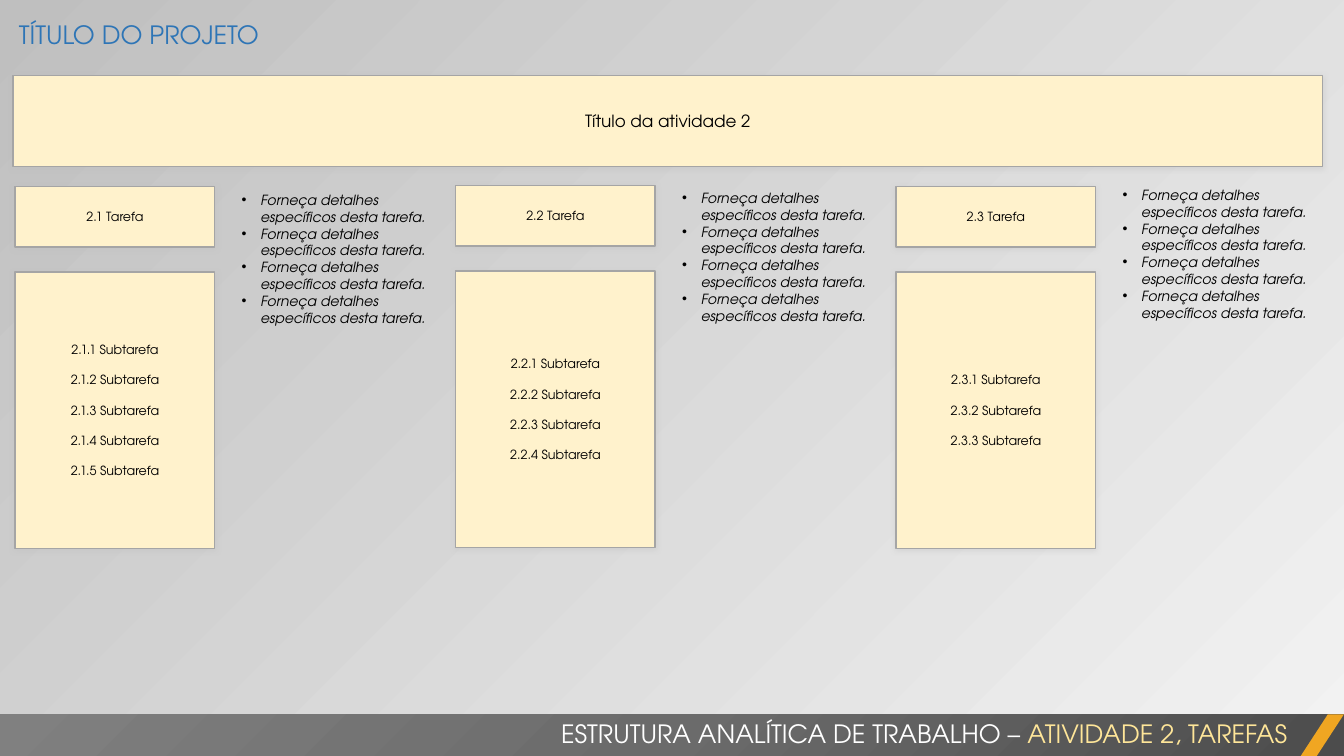
from lxml.etree import SubElement
from pptx import Presentation
from pptx.dml.color import RGBColor
from pptx.enum.shapes import MSO_SHAPE
from pptx.enum.text import MSO_ANCHOR, MSO_AUTO_SIZE, PP_ALIGN
from pptx.oxml import parse_xml
from pptx.oxml.ns import qn
from pptx.util import Pt

FONT = "TeX Gyre Adventor"
NAMESPACE = 'xmlns:a="http://schemas.openxmlformats.org/drawingml/2006/main"'
SHADOW = f"""<a:outerShdw {NAMESPACE} blurRad="50800" dist="12700" dir="5400000"
 algn="t" rotWithShape="0"><a:srgbClr val="BFBFBF"><a:alpha val="40000"/></a:srgbClr>
 </a:outerShdw>"""
FOOTER_GRADIENT = f"""<a:gradFill {NAMESPACE} rotWithShape="1"><a:gsLst>
 <a:gs pos="0"><a:srgbClr val="4C4C4C"/></a:gs>
 <a:gs pos="50000"><a:srgbClr val="6B6B6B"/></a:gs>
 <a:gs pos="100000"><a:srgbClr val="808080"/></a:gs></a:gsLst>
 <a:path path="circle"><a:fillToRect l="100000" t="100000"/></a:path></a:gradFill>"""


def write(paragraph, text, size, color="000000", italic=None):
    run = paragraph.add_run()
    run.text = text
    run.font.name = FONT
    run.font.size = Pt(size)
    run.font.italic = italic
    run.font.color.rgb = RGBColor.from_string(color)


def add_box(left, top, width, height, lines, size):
    """Add a cream box with a soft shadow and centred lines, one blank line apart."""
    box = slide.shapes.add_shape(
        MSO_SHAPE.RECTANGLE, Pt(left), Pt(top), Pt(width), Pt(height))
    box.fill.solid()
    box.fill.fore_color.rgb = RGBColor.from_string("FFF2CC")
    box.line.color.rgb = RGBColor.from_string("A5A5A5")
    box.line.width = Pt(1)
    box.shadow.inherit = False
    box._element.spPr.find(qn("a:effectLst")).append(parse_xml(SHADOW))
    frame = box.text_frame
    frame.word_wrap = True
    frame.vertical_anchor = MSO_ANCHOR.MIDDLE
    for index, line in enumerate(lines):
        paragraph = frame.add_paragraph() if index else frame.paragraphs[0]
        paragraph.alignment = PP_ALIGN.CENTER
        if index:
            paragraph.space_before = Pt(1.2 * size)
        write(paragraph, line, size)


presentation = Presentation()
presentation.slide_width = Pt(960)
presentation.slide_height = Pt(540)
slide = presentation.slides.add_slide(presentation.slide_layouts[6])

background = slide.background.fill
background.gradient()
background.gradient_angle = 135
for stop, color, position in zip(background.gradient_stops, ("F2F2F2", "BFBFBF"), (0, 1)):
    stop.color.rgb = RGBColor.from_string(color)
    stop.position = position

# Footer band with its accent
footer = slide.shapes.add_shape(MSO_SHAPE.RECTANGLE, 0, Pt(510.2), Pt(960), Pt(30))
footer.shadow.inherit = False
footer.line.fill.background()
footer._element.spPr.find(qn("a:prstGeom")).addnext(parse_xml(FOOTER_GRADIENT))

accent = slide.shapes.add_shape(
    MSO_SHAPE.PARALLELOGRAM, Pt(929), Pt(510.2), Pt(31), Pt(30))
accent.adjustments[0] = 0.652
accent.shadow.inherit = False
accent.fill.solid()
accent.fill.fore_color.rgb = RGBColor.from_string("F0A622")
accent.line.fill.background()

# Project title and footer title
titles = [
    (6.5, 10.1, 728, PP_ALIGN.LEFT, [("TÍTULO DO PROJETO", "2E75B6")]),
    (122.4, 509.8, 804.2, PP_ALIGN.RIGHT,
     [("ESTRUTURA ANALÍTICA DE TRABALHO – ", "FFFFFF"), ("ATIVIDADE 2, TAREFAS", "FFE699")]),
]
for left, top, width, alignment, runs in titles:
    title = slide.shapes.add_textbox(Pt(left), Pt(top), Pt(width), Pt(29))
    title.text_frame.word_wrap = True
    title.text_frame.auto_size = MSO_AUTO_SIZE.SHAPE_TO_FIT_TEXT
    paragraph = title.text_frame.paragraphs[0]
    paragraph.alignment = alignment
    for text, color in runs:
        write(paragraph, text, 18, color)

# Activity banner, then one column per task
add_box(9.4, 54, 935.3, 64.8, ["Título da atividade 2"], 12)

columns = [(133.2, 133.2, 5), (132.5, 131.8, 4), (133.2, 129.6, 3)]
for number, (box_top, details_top, subtask_count) in enumerate(columns, start=1):
    left = 10.8 + (number - 1) * 314.6
    add_box(left, box_top, 142.6, 43.2, [f"2.{number} Tarefa"], 9)
    subtasks = [f"2.{number}.{item} Subtarefa" for item in range(1, subtask_count + 1)]
    add_box(left, box_top + 61.2, 142.6, 197.3, subtasks, 9)

    details = slide.shapes.add_textbox(
        Pt(left + 154.8), Pt(details_top), Pt(148.3), Pt(216))
    frame = details.text_frame
    frame.word_wrap = True
    frame.auto_size = MSO_AUTO_SIZE.SHAPE_TO_FIT_TEXT
    for index in range(4):
        paragraph = frame.add_paragraph() if index else frame.paragraphs[0]
        properties = paragraph._p.get_or_add_pPr()
        properties.set("marL", str(Pt(13.5)))
        properties.set("indent", str(-Pt(13.5)))
        SubElement(properties, qn("a:buFont"), typeface="Arial")
        SubElement(properties, qn("a:buChar"), char="•")
        write(paragraph, "Forneça detalhes específicos desta tarefa.", 10, italic=True)

presentation.save("out.pptx")
